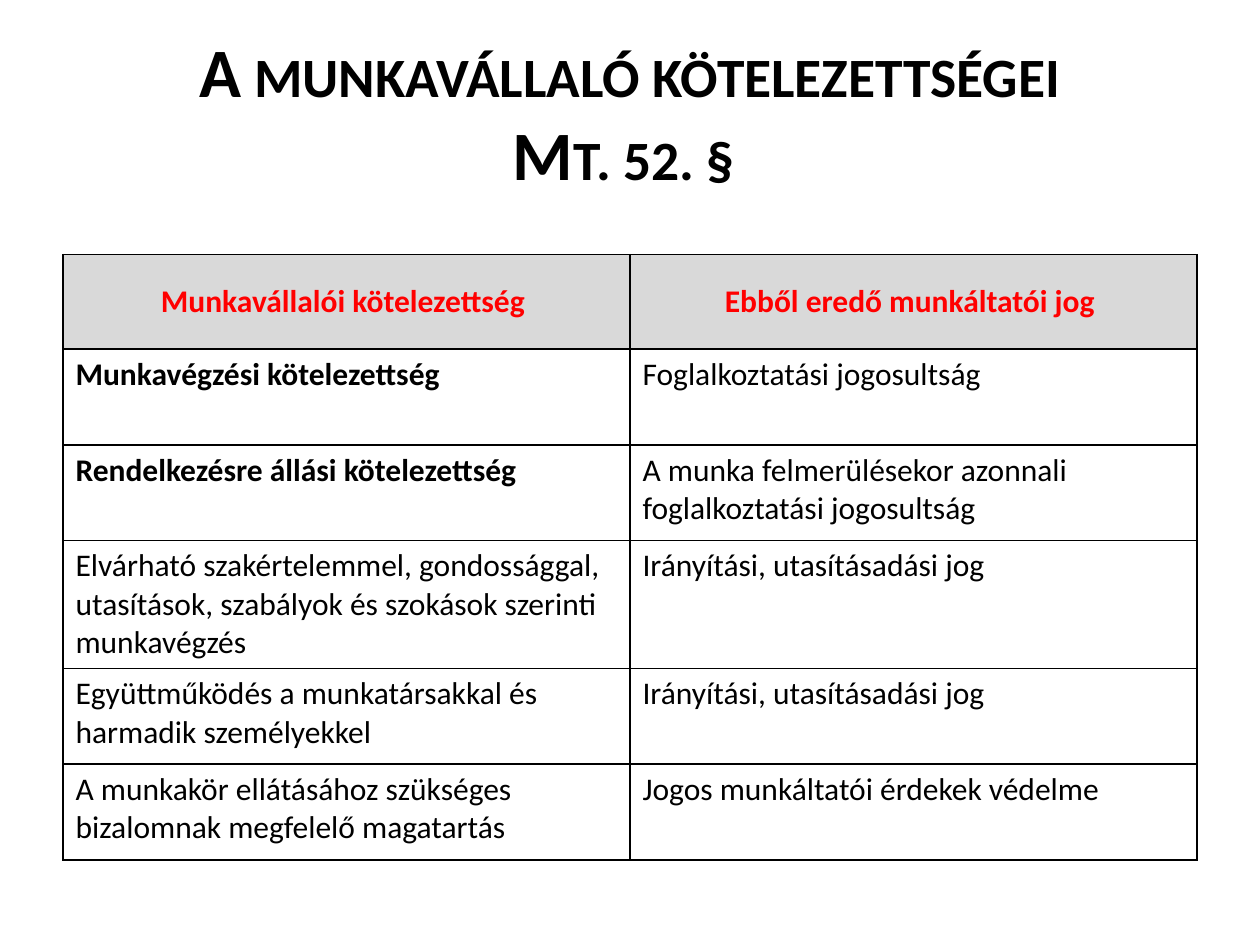
from lxml import etree
from pptx import Presentation
from pptx.dml.color import RGBColor
from pptx.enum.text import MSO_ANCHOR, MSO_AUTO_SIZE, PP_ALIGN
from pptx.oxml.ns import qn
from pptx.util import Inches, Pt

CENTER, LEFT = PP_ALIGN.CENTER, PP_ALIGN.LEFT
MIDDLE, TOP = MSO_ANCHOR.MIDDLE, MSO_ANCHOR.TOP
NO_AUTOFIT = MSO_AUTO_SIZE.NONE
TITLE_ONLY = 5
FONT = "Calibri"
BLACK, RED, GREY, WHITE = "000000", "FF0000", "D9D9D9", "FFFFFF"

TITLE = "A munkavállaló kötelezettségei\vMt. 52. § "
HEADINGS = ("Munkavállalói kötelezettség ", "Ebből eredő munkáltatói jog ")
DUTIES_AND_RIGHTS = [
    ("Munkavégzési kötelezettség", "Foglalkoztatási jogosultság"),
    ("Rendelkezésre állási kötelezettség",
     "A munka felmerülésekor azonnali foglalkoztatási jogosultság"),
    ("Elvárható szakértelemmel, gondossággal, utasítások, szabályok és "
     "szokások szerinti munkavégzés", "Irányítási, utasításadási jog"),
    ("Együttműködés a munkatársakkal és harmadik személyekkel",
     "Irányítási, utasításadási jog"),
    ("A munkakör ellátásához szükséges bizalomnak megfelelő magatartás",
     "Jogos munkáltatói érdekek védelme"),
]
BOLD_DUTIES = 2


def rgb(value):
    return RGBColor.from_string(value)


def format_text(frame, align, color, **font_values):
    for para in frame.paragraphs:
        para.alignment = align
        for span in para.runs:
            span.font.color.rgb = rgb(color)
            for name, value in {"name": FONT, **font_values}.items():
                setattr(span.font, name, value)


def border_cell(cell, color=BLACK, width=Pt(1)):
    properties = cell._tc.get_or_add_tcPr()
    for index, side in enumerate(("a:lnL", "a:lnR", "a:lnT", "a:lnB")):
        line = etree.Element(qn(side), w=str(width))
        fill = etree.SubElement(line, qn("a:solidFill"))
        etree.SubElement(fill, qn("a:srgbClr"), val=color)
        properties.insert(index, line)


def fill_cell(cell, text, fill, anchor, align, color, bold):
    cell.text = text
    cell.vertical_anchor = anchor
    cell.fill.solid()
    cell.fill.fore_color.rgb = rgb(fill)
    format_text(cell.text_frame, align, color, size=Pt(18), bold=bold)
    border_cell(cell)


def place_title(page, left, top, width, height):
    title = page.shapes.title
    box = {"left": left, "top": top, "width": width, "height": height}
    for name, value in box.items():
        setattr(title, name, value)
    frame = title.text_frame
    frame.text = TITLE
    frame.auto_size = NO_AUTOFIT
    frame.vertical_anchor = MIDDLE
    format_text(frame, CENTER, BLACK, size=Pt(39.6), bold=True)
    for span in frame.paragraphs[0].runs:
        span.font._element.set("cap", "small")


def place_table(page, left, top, width, height):
    rows = [HEADINGS, *DUTIES_AND_RIGHTS]
    table = page.shapes.add_table(
        len(rows), len(HEADINGS), left, top, width, height).table
    for row_index, texts in enumerate(rows):
        table.rows[row_index].height = Inches(0.76 if row_index else 0.75)
        for column_index, text in enumerate(texts):
            cell = table.cell(row_index, column_index)
            if row_index == 0:
                fill_cell(cell, text, GREY, MIDDLE, CENTER, RED, True)
            else:
                bold = column_index == 0 and row_index <= BOLD_DUTIES
                fill_cell(cell, text, WHITE, TOP, LEFT, BLACK, bold)


def main():
    deck = Presentation()
    deck.slide_width, deck.slide_height = Inches(10), Inches(7.5)
    page = deck.slides.add_slide(deck.slide_layouts[TITLE_ONLY])
    place_title(page, Inches(0.5), Inches(0.3), Inches(9), Inches(1.17))
    place_table(page, Inches(0.5), Inches(2.02), Inches(9), Inches(4.55))
    deck.save("out.pptx")


if __name__ == "__main__":
    main()
